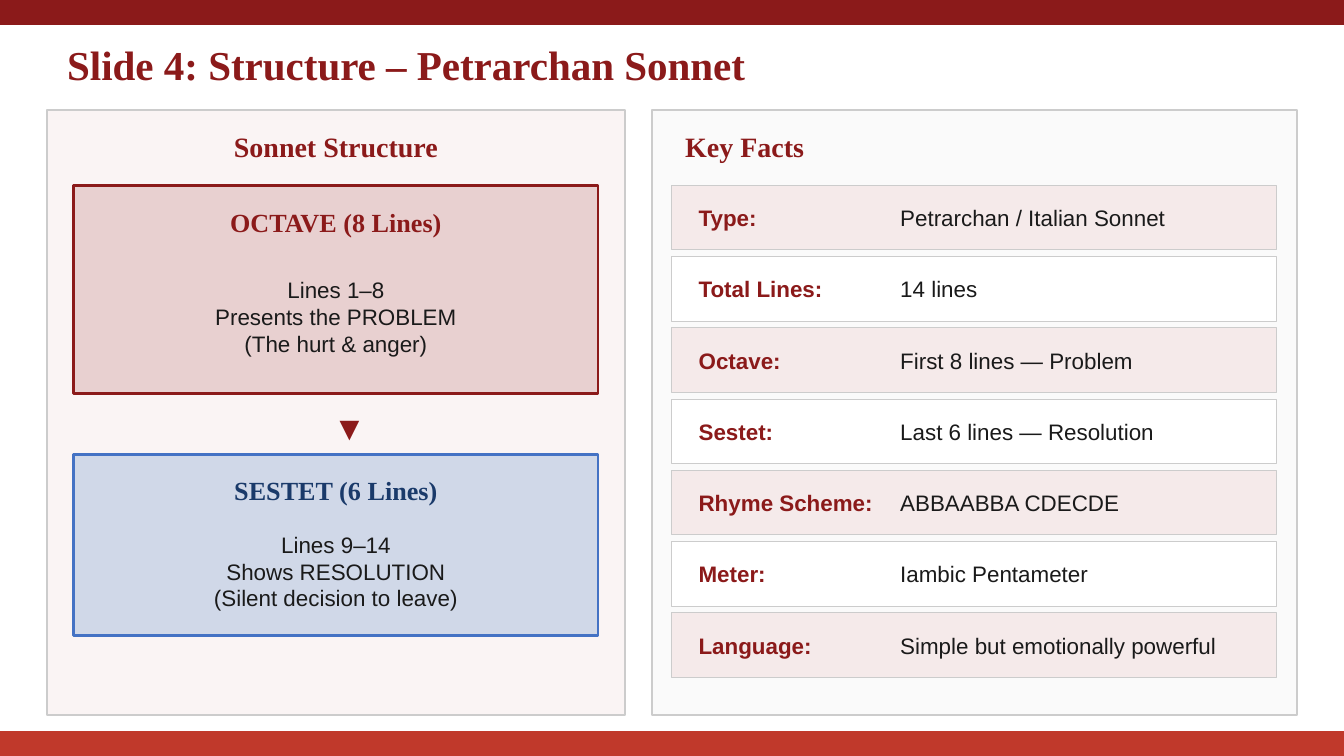
from pptx import Presentation
from pptx.dml.color import RGBColor
from pptx.enum.shapes import MSO_SHAPE
from pptx.enum.text import MSO_ANCHOR, MSO_AUTO_SIZE, PP_ALIGN
from pptx.util import Inches, Pt

DARK_RED = RGBColor(0x8B, 0x1A, 0x1A)
BRICK = RGBColor(0xC0, 0x39, 0x2B)
ROSE = RGBColor(0xE8, 0xD0, 0xD0)
BLUSH = RGBColor(0xFA, 0xF4, 0xF4)
ROW_PINK = RGBColor(0xF5, 0xEA, 0xEA)
NAVY = RGBColor(0x1A, 0x3A, 0x6A)
BLUE = RGBColor(0x44, 0x72, 0xC4)
PALE_BLUE = RGBColor(0xD0, 0xD8, 0xE8)
OFF_WHITE = RGBColor(0xFA, 0xFA, 0xFA)
WHITE = RGBColor(0xFF, 0xFF, 0xFF)
GREY = RGBColor(0xCC, 0xCC, 0xCC)
INK = RGBColor(0x1A, 0x1A, 0x1A)
SERIF, SANS = "Times New Roman", "Arial"

# A 16:9 slide
presentation = Presentation()
presentation.slide_width = Inches(10)
presentation.slide_height = presentation.slide_width * 9 // 16
slide = presentation.slides.add_slide(presentation.slide_layouts[5])

# Square grid: 100 columns across, 56.25 rows down
COLUMNS = 100
ROWS = COLUMNS * 9 / 16
UNIT = presentation.slide_width // COLUMNS


def add_box(left, top, width, height, fill, line, line_width=1):
    shape = slide.shapes.add_shape(
        MSO_SHAPE.RECTANGLE, *[round(n * UNIT) for n in (left, top, width, height)])
    shape.shadow.inherit = False
    shape.fill.solid()
    shape.fill.fore_color.rgb = fill
    shape.line.color.rgb = line
    shape.line.width = Pt(line_width)


def add_text(left, top, width, height, text, size, font=SANS, color=INK,
             bold=False, align=PP_ALIGN.LEFT, shape=None):
    shape = shape or slide.shapes.add_textbox(0, 0, 0, 0)
    shape.left, shape.top, shape.width, shape.height = [
        round(n * UNIT) for n in (left, top, width, height)]
    frame = shape.text_frame
    frame.text = text
    frame.word_wrap = True
    frame.auto_size = MSO_AUTO_SIZE.NONE
    frame.vertical_anchor = MSO_ANCHOR.MIDDLE
    for paragraph in frame.paragraphs:
        paragraph.alignment = align
        for run in paragraph.runs:
            run.font.name = font
            run.font.size = Pt(size)
            run.font.bold = bold
            run.font.color.rgb = color


# Top and bottom bars, title
BAR = 1.8
for top, color in ((0, DARK_RED), (ROWS - BAR, BRICK)):
    add_box(0, top, COLUMNS, BAR, color, color)
add_text(4, 2.5, 92, 4.5, "Slide 4: Structure – Petrarchan Sonnet", 22,
         SERIF, DARK_RED, True, shape=slide.shapes.title)

# Two panels with headings
panels = (
    (3.5, 43, BLUSH, "Sonnet Structure", 5, 40, PP_ALIGN.CENTER),
    (48.5, 48, OFF_WHITE, "Key Facts", 50, 45, PP_ALIGN.LEFT),
)
for left, width, fill, heading, text_left, text_width, align in panels:
    add_box(left, 8.2, width, 45, fill, GREY)
    add_text(text_left, 9, text_width, 3.8, heading, 15, SERIF, DARK_RED, True, align)

# Octave and sestet blocks: box top and height, heading top, body top and height
blocks = (
    (13.8, 15.5, 14.8, 18.8, 9.5, ROSE, DARK_RED, DARK_RED, "OCTAVE (8 Lines)",
     "Lines 1–8\nPresents the PROBLEM\n(The hurt & anger)"),
    (33.8, 13.5, 34.7, 38.5, 8, PALE_BLUE, BLUE, NAVY, "SESTET (6 Lines)",
     "Lines 9–14\nShows RESOLUTION\n(Silent decision to leave)"),
)
for top, height, head_top, body_top, body_height, fill, line, color, heading, body in blocks:
    add_box(5.5, top, 39, height, fill, line, 1.5)
    add_text(6.5, head_top, 37, 3.5, heading, 14, SERIF, color, True, PP_ALIGN.CENTER)
    add_text(6.5, body_top, 37, body_height, body, 12, align=PP_ALIGN.CENTER)
add_text(18, 30, 16, 3.5, "▼", 18, color=DARK_RED, align=PP_ALIGN.CENTER)

# Key facts rows
facts = (
    ("Type:", "Petrarchan / Italian Sonnet"),
    ("Total Lines:", "14 lines"),
    ("Octave:", "First 8 lines — Problem"),
    ("Sestet:", "Last 6 lines — Resolution"),
    ("Rhyme Scheme:", "ABBAABBA CDECDE"),
    ("Meter:", "Iambic Pentameter"),
    ("Language:", "Simple but emotionally powerful"),
)
for index, (label, value) in enumerate(facts):
    top = 13.8 + 5.3 * index
    add_box(50, top, 45, 4.8, WHITE if index % 2 else ROW_PINK, GREY, 0.5)
    add_text(51, top + 0.8, 15, 3.2, label, 12, color=DARK_RED, bold=True)
    add_text(66, top + 0.8, 28, 3.2, value, 12)

presentation.save("out.pptx")
